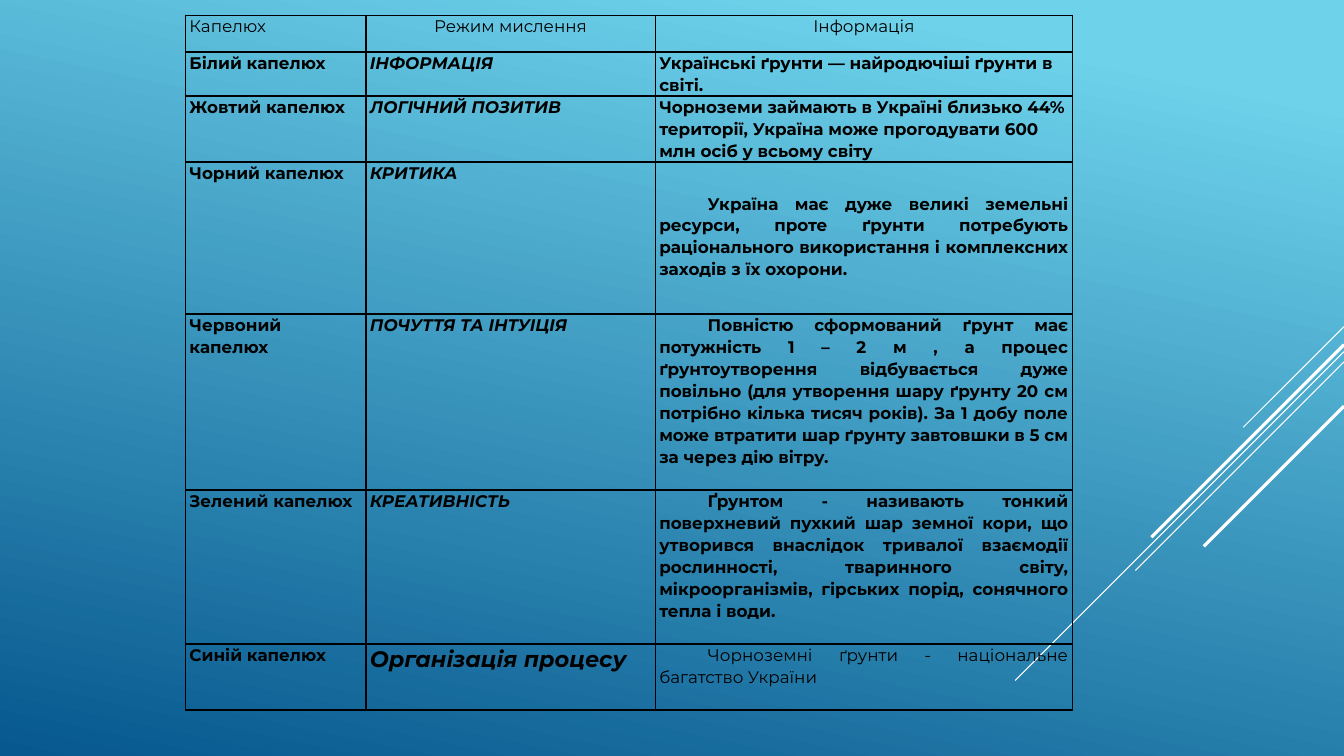
from dataclasses import dataclass
from typing import Optional

from lxml.etree import SubElement
from pptx import Presentation
from pptx.dml.color import RGBColor
from pptx.enum.shapes import MSO_CONNECTOR
from pptx.enum.text import PP_ALIGN
from pptx.oxml.ns import qn
from pptx.util import Inches, Pt

WIDE, HIGH = Inches(13.33), Inches(7.5)
FONT = "Montserrat"
BLACK, WHITE = "000000", "FFFFFF"


@dataclass
class Ray:
    top: float
    run: float
    weight: float


@dataclass
class Row:
    high: float
    hat: str
    mode: str
    fact: str
    bold: bool = True
    just: bool = False
    lead: float = 0
    size: float = 12


RAYS = [
    Ray(43.2, 7.5, 0.75),
    Ray(46.53, 24.47, 0.75),
    Ray(47.87, 15.52, 0.75),
    Ray(45.6, 14.33, 2.25),
    Ray(53.73, 10.43, 2.25),
]
COLS = [13.43, 21.53, 31.05]
HEAD = Row(4.89, "Капелюх", "Режим мислення", "Інформація", bold=False)
ROWS = [
    Row(5.82, "Білий капелюх", "ІНФОРМАЦІЯ",
        "Українські ґрунти — найродючіші ґрунти в світі."),
    Row(8.73, "Жовтий капелюх", "ЛОГІЧНИЙ ПОЗИТИВ",
        "Чорноземи займають в Україні близько 44% території, Україна може "
        "прогодувати 600 млн осіб у всьому світу"),
    Row(20.11, "Чорний капелюх", "КРИТИКА",
        "Україна має дуже великі земельні ресурси, проте ґрунти потребують "
        "раціонального використання і комплексних заходів з їх охорони.",
        just=True, lead=4),
    Row(23.28, "Червоний капелюх", "ПОЧУТТЯ ТА ІНТУІЦІЯ",
        "Повністю сформований ґрунт має потужність 1 – 2 м , а процес "
        "ґрунтоутворення відбувається дуже повільно (для утворення шару "
        "ґрунту 20 см потрібно кілька тисяч років). За 1 добу поле може "
        "втратити шар ґрунту завтовшки в 5 см за через дію вітру.",
        just=True),
    Row(20.37, "Зелений капелюх", "КРЕАТИВНІСТЬ",
        "Ґрунтом - називають тонкий поверхневий пухкий шар земної кори, що "
        "утворився внаслідок тривалої взаємодії рослинності, тваринного "
        "світу, мікроорганізмів, гірських порід, сонячного тепла і води.",
        just=True),
    Row(8.73, "Синій капелюх", "Організація процесу",
        "Чорноземні ґрунти - національне багатство України",
        bold=False, just=True, size=16),
]


def across(share: float) -> int:
    return round(WIDE * share / 100)


def down(share: float) -> int:
    return round(HIGH * share / 100)


def tint(code: str) -> RGBColor:
    return RGBColor.from_string(code)


def paint(slide) -> None:
    fill = slide.background.fill
    fill.gradient()
    fill.gradient_angle = 258
    for stop, (place, code) in zip(fill.gradient_stops, [(0.1, "6ED2EB"), (1, "06588E")]):
        stop.position = place
        stop.color.rgb = tint(code)


def draw(slide, ray: Ray) -> None:
    top, run = down(ray.top), across(ray.run)
    line = slide.shapes.add_connector(
        MSO_CONNECTOR.STRAIGHT, WIDE, top, WIDE - run, top + run)
    line.line.color.rgb = tint(WHITE)
    line.line.width = Pt(ray.weight)
    SubElement(line._element.spPr, qn("a:effectLst"))


def edge(cell) -> None:
    props = cell._tc.get_or_add_tcPr()
    for side in ("lnL", "lnR", "lnT", "lnB"):
        line = SubElement(props, qn(f"a:{side}"), w=str(Pt(1)))
        SubElement(SubElement(line, qn("a:solidFill")), qn("a:srgbClr"), val=BLACK)
    cell.fill.background()


def write(cell, text: str, *, size: float = 12, bold: bool = True,
          slant: bool = False, align: Optional[PP_ALIGN] = PP_ALIGN.LEFT,
          lead: float = 0) -> None:
    cell.margin_left = cell.margin_right = Inches(0.04)
    cell.margin_top, cell.margin_bottom = down(lead), 0
    para = cell.text_frame.paragraphs[0]
    para.alignment = align
    para.line_spacing = 1.07
    if align == PP_ALIGN.JUSTIFY:
        para._p.get_or_add_pPr().set("indent", str(Inches(0.48)))
    run = para.add_run()
    run.text = text
    font = run.font
    font.name, font.size = FONT, Pt(size)
    font.bold, font.italic = bold, slant
    font.color.rgb = tint(BLACK)


def chart_hats(slide) -> None:
    rows = [HEAD, *ROWS]
    table = slide.shapes.add_table(
        len(rows), len(COLS), across(13.8), down(2),
        across(sum(COLS)), down(sum(row.high for row in rows))).table
    table.first_row = table.horz_banding = False
    for col, wide in zip(table.columns, COLS):
        col.width = across(wide)
    for line, row in zip(table.rows, rows):
        line.height = down(row.high)
        for cell in line.cells:
            edge(cell)
        hat, mode, fact = line.cells
        if row is HEAD:
            write(hat, row.hat, bold=False)
            write(mode, row.mode, bold=False, align=PP_ALIGN.CENTER)
            write(fact, row.fact, bold=False, align=PP_ALIGN.CENTER)
            continue
        write(hat, row.hat)
        write(mode, row.mode, size=row.size, slant=True)
        write(fact, row.fact, bold=row.bold, lead=row.lead,
              align=PP_ALIGN.JUSTIFY if row.just else PP_ALIGN.LEFT)


def main() -> None:
    deck = Presentation()
    deck.slide_width, deck.slide_height = WIDE, HIGH
    slide = deck.slides.add_slide(deck.slide_layouts[6])
    paint(slide)
    for ray in RAYS:
        draw(slide, ray)
    chart_hats(slide)
    deck.save("out.pptx")


if __name__ == "__main__":
    main()
